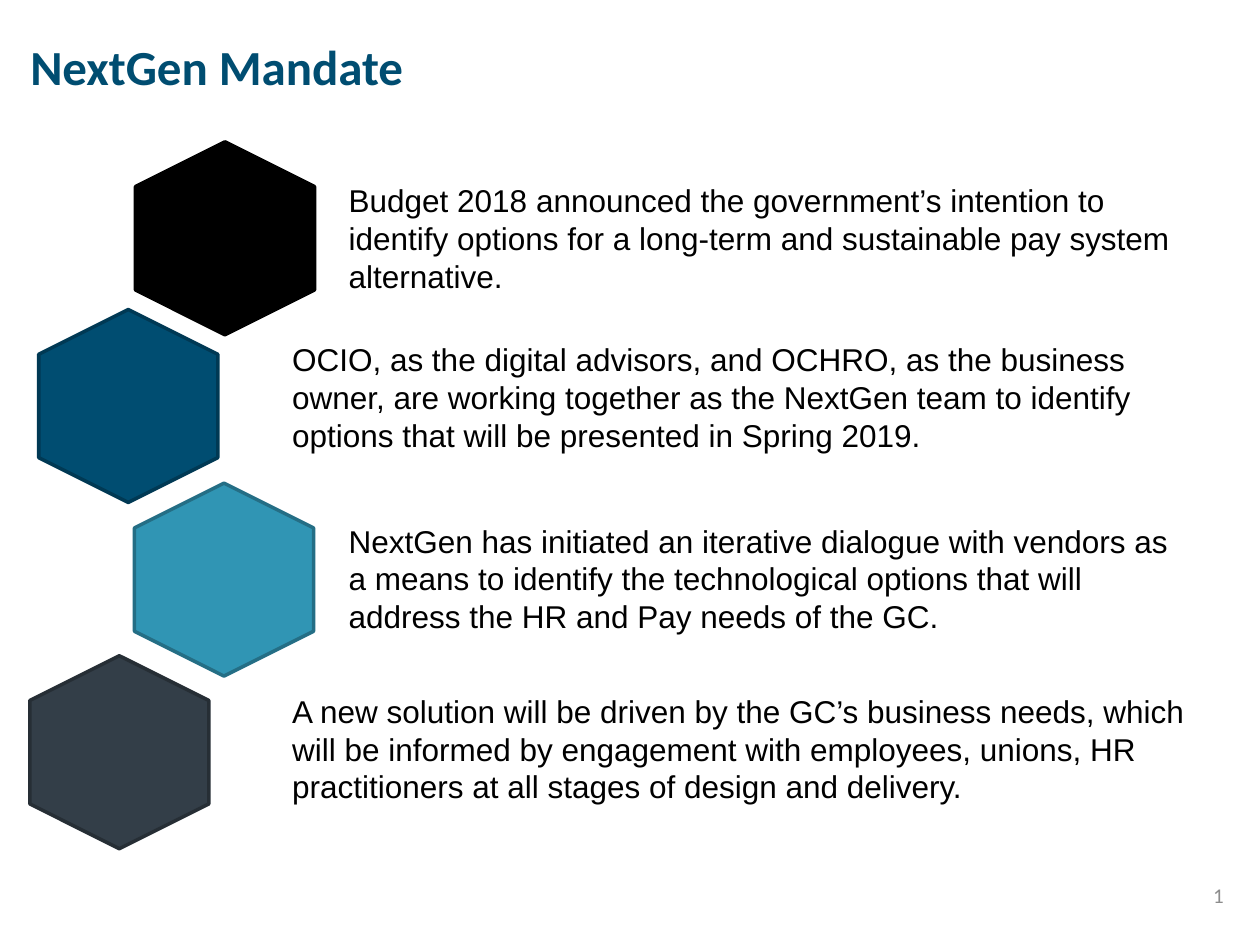
import lxml.etree
import pptx
import pptx.dml.color
import pptx.enum.shapes
import pptx.enum.text
import pptx.oxml.ns
import pptx.util

Cm = pptx.util.Cm
Pt = pptx.util.Pt
ALIGN = pptx.enum.text.PP_ALIGN
ANCHOR = pptx.enum.text.MSO_ANCHOR

COLOURS = {
    "title": "004D71", "text": "000000", "number": "8C8C8C",
    "black": "000000", "blue": "004D71", "blue edge": "003954",
    "teal": "3095B4", "teal edge": "246E85",
    "slate": "333E48", "slate edge": "262E35",
}

TITLE = "NextGen Mandate"
# Hexagon left and top, fill, edge; text left, top and width; wording (cm)
MANDATE = [
    (2.59, 3.0, "black", "black", 6.78, 3.53, 17.7,
     "Budget 2018 announced the government’s intention to identify options "
     "for a long-term and sustainable pay system alternative."),
    (0.64, 6.38, "blue", "blue edge", 5.64, 6.73, 18.85,
     "OCIO, as the digital advisors, and OCHRO, as the business owner, are "
     "working together as the NextGen team to identify options that will be "
     "presented in Spring 2019."),
    (2.57, 9.88, "teal", "teal edge", 6.78, 10.39, 17.42,
     "NextGen has initiated an iterative dialogue with vendors as a means to "
     "identify the technological options that will address the HR and Pay "
     "needs of the GC."),
    (0.46, 13.36, "slate", "slate edge", 5.64, 13.82, 18.57,
     "A new solution will be driven by the GC’s business needs, which will be "
     "informed by engagement with employees, unions, HR practitioners at all "
     "stages of design and delivery."),
]
HEXAGON_SIZE = (3.89, 3.61)
TEXT_HEIGHT = 2.57


def colour(name):
    return pptx.dml.color.RGBColor.from_string(COLOURS[name])


def style(paragraph, font_name, size, colour_name, align=ALIGN.LEFT):
    paragraph.alignment = align
    paragraph.font.name = font_name
    paragraph.font.size = Pt(size)
    paragraph.font.color.rgb = colour(colour_name)


def add_title(slide):
    title = slide.shapes.title
    title.left, title.top, title.width, title.height = (
        Cm(0.61), Cm(0.74), Cm(15.09), Cm(1.35))
    frame = title.text_frame
    frame.text = TITLE
    frame.auto_size = pptx.enum.text.MSO_AUTO_SIZE.NONE
    frame.vertical_anchor = ANCHOR.TOP
    frame.margin_left = frame.margin_right = 0
    frame.margin_top = frame.margin_bottom = 0
    style(frame.paragraphs[0], "Calibri", 28, "title")
    frame.paragraphs[0].font.bold = True


def add_hexagon(slide, left, top, fill, edge):
    hexagon = slide.shapes.add_shape(
        pptx.enum.shapes.MSO_SHAPE.HEXAGON, Cm(left), Cm(top),
        *map(Cm, HEXAGON_SIZE))
    hexagon.rotation = 90
    hexagon.shadow.inherit = False
    hexagon.fill.solid()
    hexagon.fill.fore_color.rgb = colour(fill)
    hexagon.line.color.rgb = colour(edge)
    hexagon.line.width = Pt(2)


def add_text(slide, left, top, width, height):
    frame = slide.shapes.add_textbox(
        Cm(left), Cm(top), Cm(width), Cm(height)).text_frame
    frame.word_wrap = True
    return frame


def add_slide_number(slide):
    frame = add_text(slide, 19.0, 17.53, 5.92, 1.02)
    frame.vertical_anchor = ANCHOR.MIDDLE
    paragraph = frame.paragraphs[0]
    style(paragraph, "Calibri", 12, "number", ALIGN.RIGHT)
    # A run carries the format, then becomes a slide number field
    run = paragraph.add_run()
    run.text = "1"
    run.font.size = Pt(12)
    run.font.name = "Calibri"
    run.font.color.rgb = colour("number")
    field = run._r
    field.tag = pptx.oxml.ns.qn("a:fld")
    field.set("id", "{B6F15528-21DE-4FAA-801E-634DDDAF4B2B}")
    field.set("type", "slidenum")


def main():
    deck = pptx.Presentation()
    deck.slide_width, deck.slide_height = Cm(25.4), Cm(19.05)
    slide = deck.slides.add_slide(deck.slide_layouts[5])
    add_title(slide)
    for hex_left, hex_top, fill, edge, left, top, width, wording in MANDATE:
        add_hexagon(slide, hex_left, hex_top, fill, edge)
        frame = add_text(slide, left, top, width, TEXT_HEIGHT)
        frame.text = wording
        style(frame.paragraphs[0], "Arial", 18, "text")
    add_slide_number(slide)
    deck.save("out.pptx")


if __name__ == "__main__":
    main()
